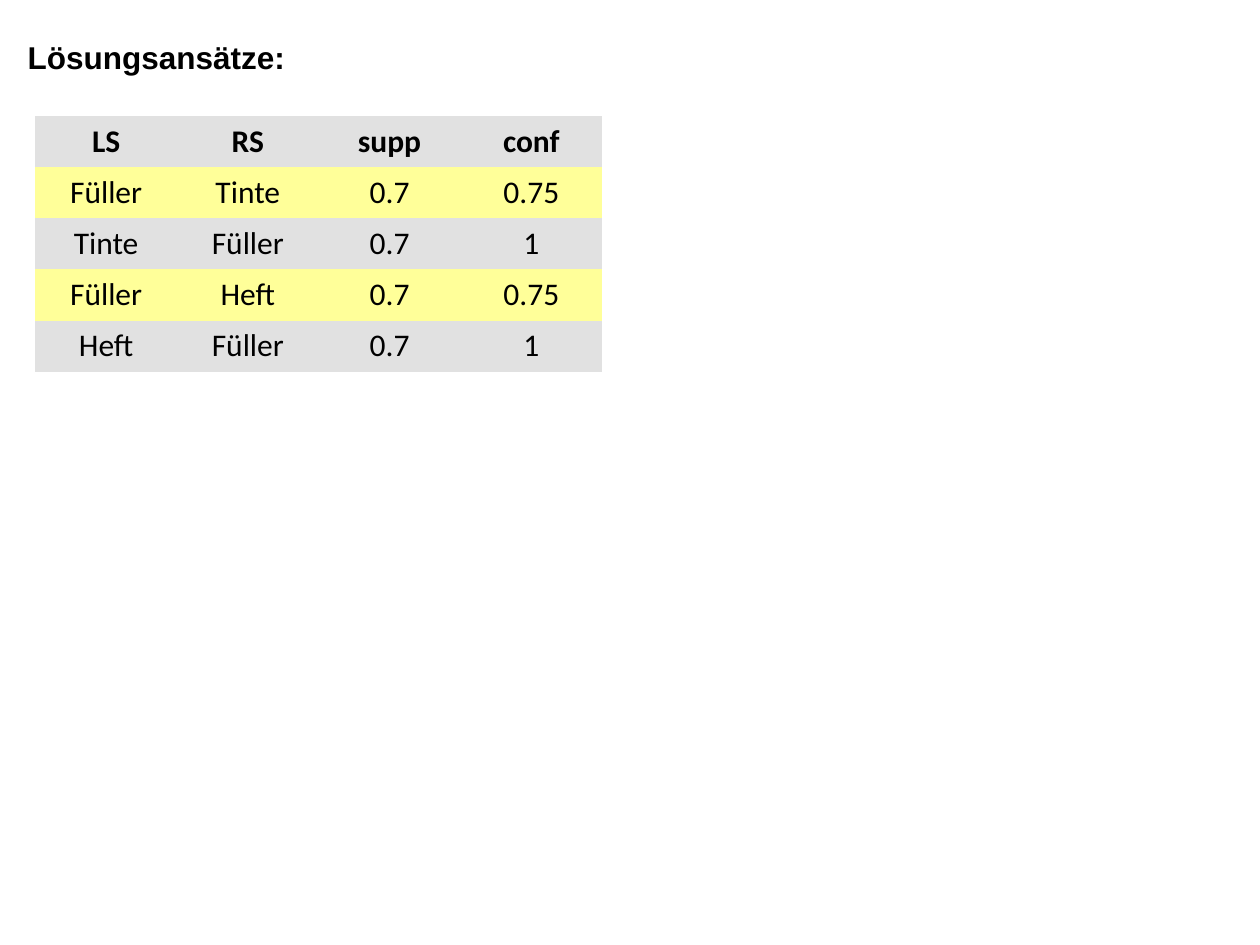
from pptx import Presentation
from pptx.dml.color import RGBColor
from pptx.enum.text import MSO_ANCHOR, PP_ALIGN
from pptx.oxml.ns import qn
from pptx.util import Inches, Pt

TITLE = "Lösungsansätze:"
HEADER = ("LS", "RS", "supp", "conf")
RULES = [
    ("Füller", "Tinte", "0.7", "0.75"),
    ("Tinte", "Füller", "0.7", "1"),
    ("Füller", "Heft", "0.7", "0.75"),
    ("Heft", "Füller", "0.7", "1"),
]
THEME = {
    "text": RGBColor.from_string("000000"),
    "bands": [RGBColor.from_string(code) for code in ("E1E1E1", "FFFF99")],
    "size": Pt(18),
    "title_font": "Arial",
    "table_font": "Calibri",
    "plain_table": "{2D5ABB26-0587-4C30-8999-92F81FD0307C}",
}


def write(frame, text, *, font, bold=False, align=PP_ALIGN.LEFT):
    para = frame.paragraphs[0]
    para.alignment = align
    span = para.add_run()
    span.text = text
    span.font.name = font
    span.font.size = THEME["size"]
    span.font.bold = bold
    span.font.color.rgb = THEME["text"]


def add_title(page):
    box = page.shapes.title
    box.left, box.top = Inches(0.12), Inches(0.25)
    box.width, box.height = Inches(2.26), Inches(0.4)
    frame = box.text_frame
    frame.word_wrap = False
    frame.vertical_anchor = MSO_ANCHOR.MIDDLE
    write(frame, TITLE, font=THEME["title_font"], bold=True)


def add_rules(page):
    rows = [HEADER, *RULES]
    holder = page.shapes.add_table(
        len(rows), len(HEADER), Inches(0.28), Inches(0.92), Inches(4.5), Inches(2.03)
    )
    table = holder.table
    table.horz_banding = False
    table._tbl.tblPr.find(qn("a:tableStyleId")).text = THEME["plain_table"]
    for row_index, row in enumerate(rows):
        for column_index, text in enumerate(row):
            cell = table.cell(row_index, column_index)
            cell.fill.solid()
            cell.fill.fore_color.rgb = THEME["bands"][row_index % 2]
            cell.vertical_anchor = MSO_ANCHOR.MIDDLE
            write(cell.text_frame, text, font=THEME["table_font"],
                  bold=row_index == 0, align=PP_ALIGN.CENTER)


def main():
    deck = Presentation()
    deck.slide_width, deck.slide_height = Inches(10), Inches(7.5)
    page = deck.slides.add_slide(deck.slide_layouts[5])
    add_rules(page)
    add_title(page)
    deck.save("out.pptx")


if __name__ == "__main__":
    main()
